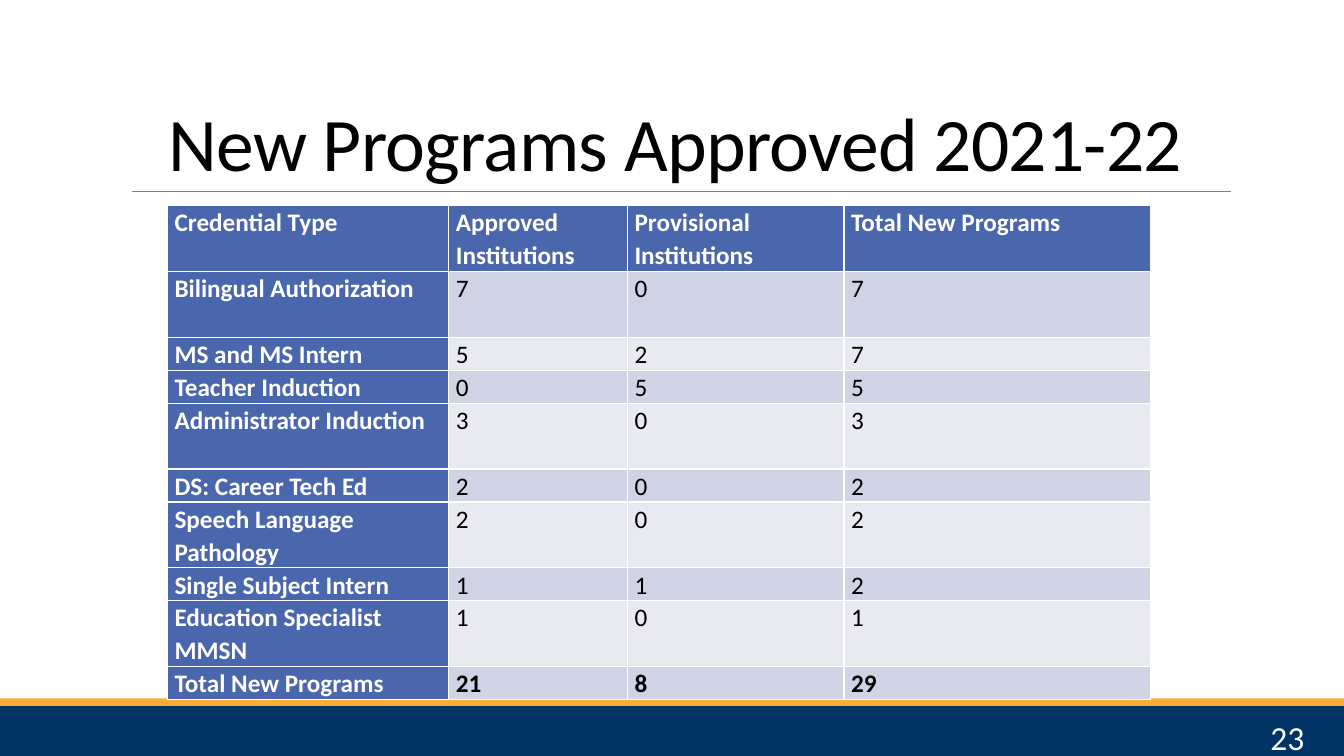
from dataclasses import dataclass

from lxml.etree import SubElement
from pptx import Presentation
from pptx.dml.color import RGBColor
from pptx.enum.shapes import MSO_CONNECTOR, MSO_SHAPE
from pptx.enum.text import MSO_ANCHOR, PP_ALIGN
from pptx.oxml.ns import qn
from pptx.util import Cm, Pt


@dataclass(frozen=True)
class Theme:
    """Colours, font and type sizes of the slide."""
    navy: str = "003366"
    orange: str = "FAAC35"
    rule: str = "808080"
    head: str = "4A66AC"
    bands: tuple = ("D0D3E3", "E9EAF1")
    dark: str = "000000"
    light: str = "FFFFFF"
    font: str = "Calibri"
    title_size: int = 54
    table_size: int = 18
    number_size: int = 24


THEME = Theme()
SLIDE_W, SLIDE_H = 33.87, 19.05
LINE_H = 0.83
COLUMN_WIDTHS = (7.09, 4.5, 5.46, 7.73)
HEADERS = ("Credential Type", "Approved Institutions",
           "Provisional Institutions", "Total New Programs")
PROGRAMS = (
    ("Bilingual Authorization", 7, 0, 7, 2),
    ("MS and MS Intern", 5, 2, 7, 1),
    ("Teacher Induction", 0, 5, 5, 1),
    ("Administrator Induction", 3, 0, 3, 2),
    ("DS: Career Tech Ed", 2, 0, 2, 1),
    ("Speech Language Pathology", 2, 0, 2, 2),
    ("Single Subject Intern", 1, 1, 2, 1),
    ("Education Specialist MMSN", 1, 0, 1, 2),
    ("Total New Programs", 21, 8, 29, 1),
)


def rgb(color):
    """Turn a hex string into a colour."""
    return RGBColor.from_string(color)


def format_text(tf, size, color, bold=False, align=PP_ALIGN.LEFT, spacing=1.0):
    """Format every paragraph and run of a text frame."""
    for p in tf.paragraphs:
        p.alignment = align
        p.line_spacing = spacing
        for r in p.runs:
            r.font.name = THEME.font
            r.font.size = Pt(size)
            r.font.bold = bold
            r.font.color.rgb = rgb(color)


def add_bar(s, top, height, color):
    """Add a full-width bar."""
    sp = s.shapes.add_shape(MSO_SHAPE.RECTANGLE, 0, Cm(top), Cm(SLIDE_W), Cm(height))
    sp.shadow.inherit = False
    sp.fill.solid()
    sp.fill.fore_color.rgb = rgb(color)
    sp.line.fill.background()


def add_rule(s, left, right, y):
    """Add the thin horizontal line under the title."""
    line = s.shapes.add_connector(MSO_CONNECTOR.STRAIGHT, Cm(left), Cm(y), Cm(right), Cm(y))
    line.line.color.rgb = rgb(THEME.rule)
    line.line.width = Pt(0.5)
    SubElement(line._element.spPr, qn("a:effectLst"))


def set_title(s, text):
    """Place and format the title placeholder."""
    sp = s.shapes.title
    sp.left, sp.top, sp.width, sp.height = Cm(3.05), Cm(0.79), Cm(27.94), Cm(4.04)
    tf = sp.text_frame
    tf.text = text
    tf.word_wrap = True
    tf.vertical_anchor = MSO_ANCHOR.BOTTOM
    format_text(tf, THEME.title_size, THEME.dark, align=PP_ALIGN.CENTER, spacing=0.85)
    tf.paragraphs[0].runs[0].font._element.set("spc", "-50")


def fill_cell(cell, text, fill, color, bold):
    """Write and format one table cell."""
    cell.fill.solid()
    cell.fill.fore_color.rgb = rgb(fill)
    cell.margin_left = cell.margin_right = Cm(0.18)
    cell.margin_top = cell.margin_bottom = 0
    cell.text_frame.text = str(text)
    format_text(cell.text_frame, THEME.table_size, color, bold, spacing=1.07)


def add_program_table(s, left, top):
    """Add the table of programs by credential type."""
    rows = [(*HEADERS, 2), *PROGRAMS]
    height = LINE_H * sum(row[-1] for row in rows)
    frame = s.shapes.add_table(len(rows), len(HEADERS), Cm(left), Cm(top),
                               Cm(sum(COLUMN_WIDTHS)), Cm(height))
    table = frame.table
    table.first_col = True
    for column, width in zip(table.columns, COLUMN_WIDTHS):
        column.width = Cm(width)
    for i, (*values, lines) in enumerate(rows):
        table.rows[i].height = Cm(lines * LINE_H)
        for j, value in enumerate(values):
            heading = i == 0 or j == 0
            fill = THEME.head if heading else THEME.bands[(i - 1) % 2]
            color = THEME.light if heading else THEME.dark
            fill_cell(table.cell(i, j), value, fill, color, heading or i == len(rows) - 1)


def add_slide_number(s, text):
    """Add the slide number in the bottom bar."""
    tf = s.shapes.add_textbox(Cm(29.49), Cm(17.93), Cm(3.63), Cm(1.02)).text_frame
    tf.word_wrap = True
    tf.text = text
    format_text(tf, THEME.number_size, THEME.light, align=PP_ALIGN.RIGHT)


def main():
    """Build and save the slide."""
    prs = Presentation()
    prs.slide_width, prs.slide_height = Cm(SLIDE_W), Cm(SLIDE_H)
    s = prs.slides.add_slide(prs.slide_layouts[5])
    add_bar(s, 17.78, 1.27, THEME.navy)
    add_bar(s, 17.6, 0.18, THEME.orange)
    add_rule(s, 3.33, 31.01, 4.83)
    set_title(s, "New Programs Approved 2021-22")
    add_program_table(s, 4.22, 5.18)
    add_slide_number(s, "23")
    prs.save("out.pptx")


if __name__ == "__main__":
    main()
